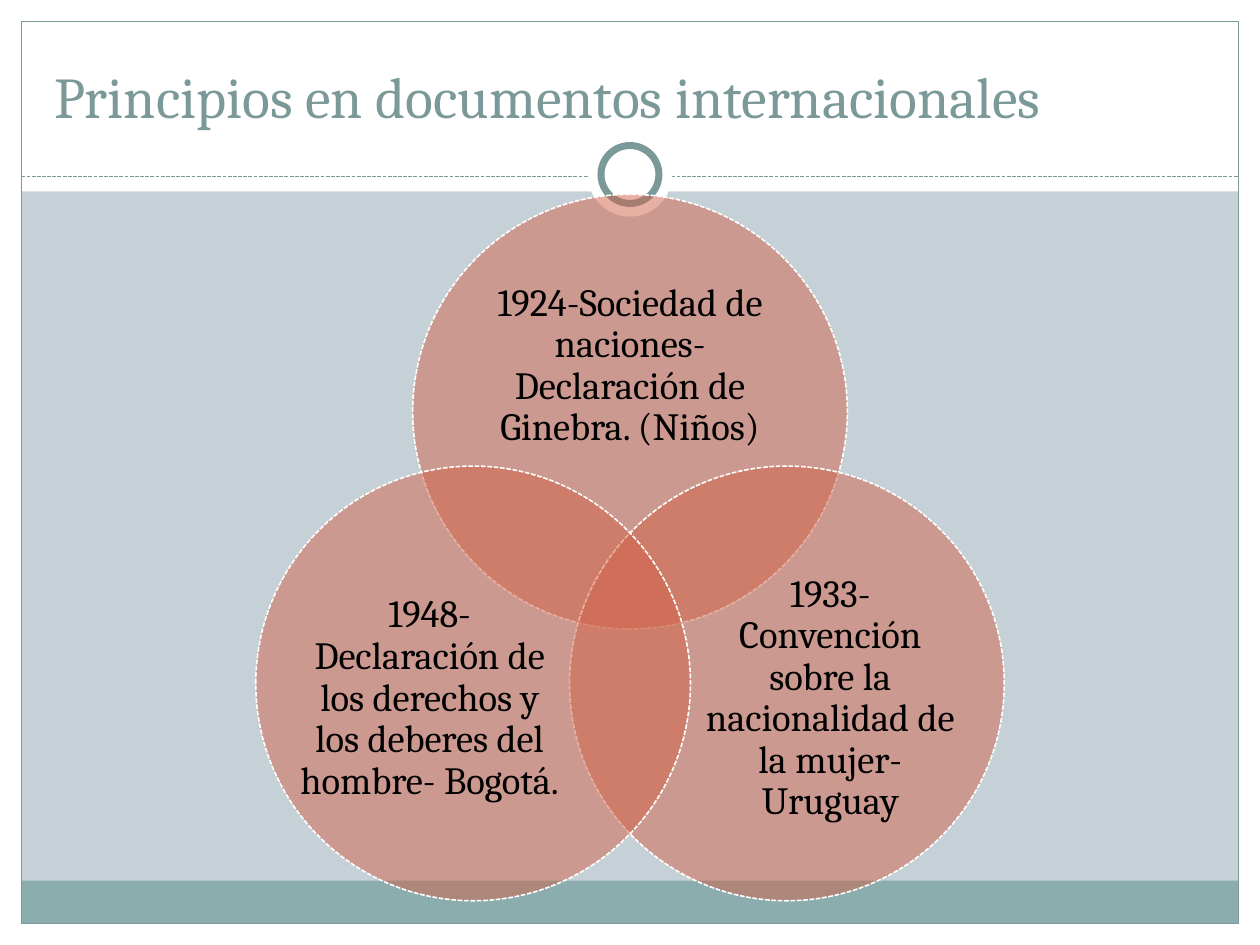
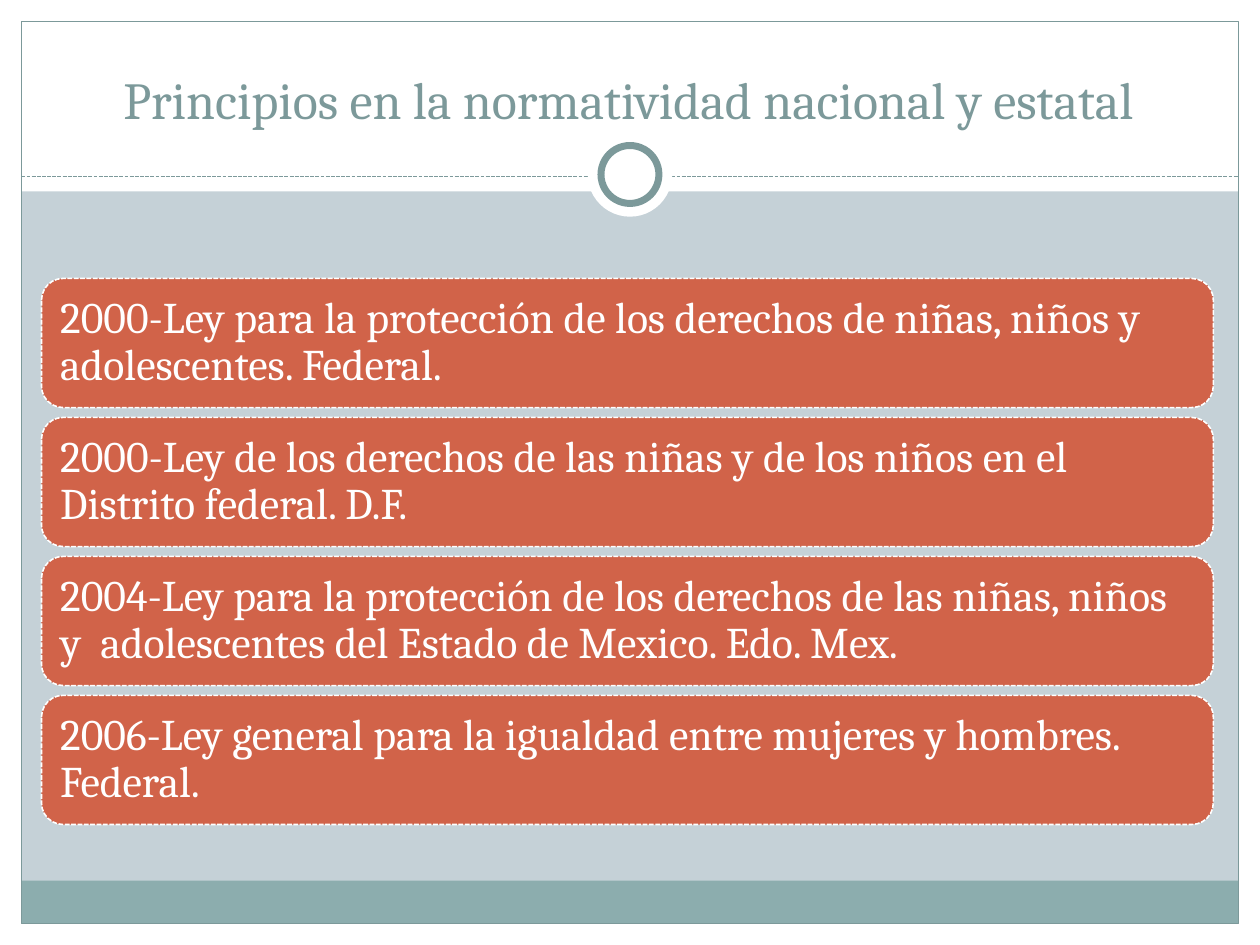
from dataclasses import dataclass
from math import cos, radians, sin

from lxml.etree import SubElement
from pptx import Presentation
from pptx.dml.color import RGBColor
from pptx.enum.dml import MSO_LINE
from pptx.enum.shapes import MSO_CONNECTOR, MSO_SHAPE
from pptx.enum.text import MSO_ANCHOR, MSO_AUTO_SIZE, PP_ALIGN
from pptx.oxml.ns import qn
from pptx.util import Inches, Pt


@dataclass(frozen=True)
class Theme:
    font: str = "Cambria"
    background: str = "C5D1D7"
    paper: str = "FFFFFF"
    ink: str = "000000"
    band: str = "8CADAE"
    rule: str = "7C999A"
    accent: str = "D16349"
    circle_size: float = 22
    bar_size: float = 25
    thin: float = 0.75
    dashed: float = 0.9
    ring: float = 4


THEME = Theme()

# Square grid over the slide: 100 columns by 75 rows
COLUMNS, ROWS = 100, 75
MARGIN = 1.7
HEADER = 15.2
RULE_ROW = 14
CENTER = COLUMNS / 2

CIRCLES = [  # angle, text, text area as shares of the diameter
    (-90, "1924-Sociedad de naciones-Declaración de Ginebra. (Niños)",
     (0.13, 0.17, 0.74, 0.45)),
    (30, "1933-Convención sobre la nacionalidad de la mujer-Uruguay",
     (0.3, 0.26, 0.6, 0.55)),
    (150, "1948-Declaración de los derechos y los deberes del hombre- Bogotá.",
     (0.1, 0.26, 0.6, 0.55)),
]

LAWS = [
    "2000-Ley para la protección de los derechos de niñas, niños y adolescentes. Federal.",
    "2000-Ley de los derechos de las niñas y de los niños en el Distrito federal. D.F.",
    "2004-Ley para la protección de los derechos de las niñas, niños y  adolescentes "
    "del Estado de Mexico. Edo. Mex.",
    "2006-Ley general para la igualdad entre mujeres y hombres. Federal.",
]


def cells(*values):
    """Turn grid cells into slide lengths."""
    return [Inches(value / 10) for value in values]


def apply_format(target, formats):
    for name, value in formats.items():
        setattr(target, name, value)


def style_line(line, color, width, dash=None):
    line.color.rgb = RGBColor.from_string(color)
    apply_format(line, {"width": Pt(width), "dash_style": dash})


def add_figure(slide, kind, box, fill=None, line=None, opacity=None):
    shape = slide.shapes.add_shape(kind, *cells(*box))
    shape.shadow.inherit = False
    if fill:
        shape.fill.solid()
        shape.fill.fore_color.rgb = RGBColor.from_string(fill)
    else:
        shape.fill.background()
    if opacity:
        color = shape.element.spPr.find(qn("a:solidFill"))[0]
        SubElement(color, qn("a:alpha")).set("val", str(opacity * 1000))
    if line:
        style_line(shape.line, *line)
    else:
        shape.line.fill.background()
    return shape


def write_text(shape, text, size, color, align, anchor=MSO_ANCHOR.MIDDLE,
               inset=0.1, spacing=0.9):
    frame = shape.text_frame
    frame.text = text
    sides = ("left", "top", "right", "bottom")
    apply_format(frame, {f"margin_{side}": Inches(inset) for side in sides})
    apply_format(frame, {"word_wrap": True, "auto_size": MSO_AUTO_SIZE.NONE,
                         "vertical_anchor": anchor})
    paragraph = frame.paragraphs[0]
    apply_format(paragraph, {"alignment": align, "line_spacing": spacing})
    font = paragraph.runs[0].font
    apply_format(font, {"name": THEME.font, "size": Pt(size)})
    font.color.rgb = RGBColor.from_string(color)


def add_rule(slide):
    rule = slide.shapes.add_connector(
        MSO_CONNECTOR.STRAIGHT,
        *cells(MARGIN, RULE_ROW, COLUMNS - MARGIN, RULE_ROW))
    style_line(rule.line, THEME.rule, THEME.thin, MSO_LINE.SQUARE_DOT)
    SubElement(rule.element.spPr, qn("a:effectLst"))


def add_medallion(slide, diameter, line=None):
    box = (CENTER - diameter / 2, 13.85 - diameter / 2, diameter, diameter)
    add_figure(slide, MSO_SHAPE.OVAL, box, THEME.paper, line)


def draw_frame(slide):
    inner_width, inner_height = COLUMNS - 2 * MARGIN, ROWS - 2 * MARGIN
    margins = [
        (0, ROWS - MARGIN, COLUMNS, MARGIN),
        (0, 0, COLUMNS, HEADER),
        (0, 0, MARGIN, ROWS),
        (COLUMNS - MARGIN, 0, MARGIN, ROWS),
    ]
    for box in margins:
        add_figure(slide, MSO_SHAPE.RECTANGLE, box, THEME.paper)
    add_figure(slide, MSO_SHAPE.RECTANGLE,
               (MARGIN, 69.9, inner_width, 3.4), THEME.band)
    add_figure(slide, MSO_SHAPE.RECTANGLE,
               (MARGIN, MARGIN, inner_width, inner_height),
               line=(THEME.rule, THEME.thin))
    add_rule(slide)
    add_medallion(slide, 6.7)
    add_medallion(slide, 4.6, (THEME.rule, THEME.ring))


def prepare_layout(layout, slide):
    """Draw the shared frame on a slide and hand it over to the layout."""
    layout.background.fill.solid()
    layout.background.fill.fore_color.rgb = RGBColor.from_string(THEME.background)
    draw_frame(slide)
    parts = [shape.element for shape in slide.shapes if not shape.is_placeholder]
    for index, element in enumerate(parts):
        element.xpath(".//p:cNvPr")[0].set("id", str(100 + index))
        layout.shapes.element.insert(2 + index, element)


def set_title(slide, text, size, align):
    title = slide.shapes.title
    left, top, width, height = cells(3.3, 2.5, 93.3, 8.3)
    apply_format(title, {"left": left, "top": top, "width": width, "height": height})
    write_text(title, text, size, THEME.rule, align, MSO_ANCHOR.BOTTOM,
               inset=0.1, spacing=1.0)
    apply_format(title.text_frame, {"margin_top": Inches(0.05),
                                    "margin_bottom": Inches(0.05)})


def add_venn(slide, circles, hub_row=47.05, diameter=34.5):
    """Place overlapping circles evenly around a hub."""
    reach = diameter * 5 / 12
    for angle, text, area in circles:
        left = CENTER + reach * cos(radians(angle)) - diameter / 2
        top = hub_row + reach * sin(radians(angle)) - diameter / 2
        add_figure(slide, MSO_SHAPE.OVAL, (left, top, diameter, diameter),
                   THEME.accent, (THEME.paper, THEME.dashed, MSO_LINE.SQUARE_DOT),
                   opacity=50)
        x, y, width, height = (share * diameter for share in area)
        label = slide.shapes.add_textbox(*cells(left + x, top + y, width, height))
        write_text(label, text, THEME.circle_size, THEME.ink, PP_ALIGN.CENTER, inset=0)


def add_bars(slide, texts, first_row=22.1, pitch=11.03, height=10.25):
    for index, text in enumerate(texts):
        bar = add_figure(slide, MSO_SHAPE.ROUNDED_RECTANGLE,
                         (3.3, first_row + index * pitch, 93, height), THEME.accent,
                         (THEME.paper, THEME.dashed, MSO_LINE.SQUARE_DOT))
        write_text(bar, text, THEME.bar_size, THEME.paper, PP_ALIGN.LEFT)


def main():
    presentation = Presentation()
    width, height = cells(COLUMNS, ROWS)
    apply_format(presentation, {"slide_width": width, "slide_height": height})
    layout = presentation.slide_layouts.get_by_name("Title Only")

    # International documents
    slide = presentation.slides.add_slide(layout)
    prepare_layout(layout, slide)
    set_title(slide, "Principios en documentos internacionales", 33, PP_ALIGN.LEFT)
    add_venn(slide, CIRCLES)

    # National and state law
    slide = presentation.slides.add_slide(layout)
    set_title(slide, "Principios en la normatividad nacional y estatal", 29.7,
              PP_ALIGN.CENTER)
    add_bars(slide, LAWS)

    presentation.save("out.pptx")


if __name__ == "__main__":
    main()
